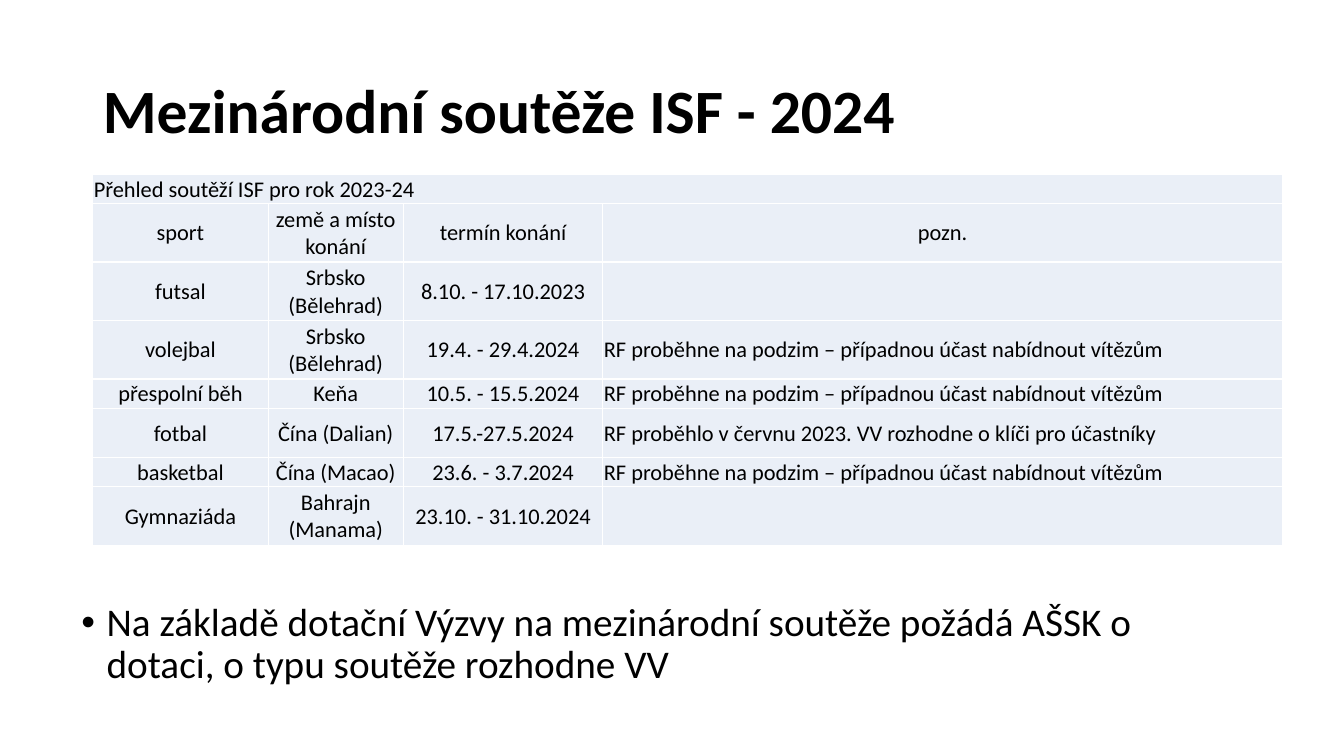
import pptx
import pptx.dml.color
import pptx.enum.text
import pptx.oxml
import pptx.oxml.ns
import pptx.util

EMU_PER_PX = 9144
COLORS = {"text": "000000", "cell": "EAEFF7", "border": "FFFFFF"}
FONT = "Calibri"
ALIGN = pptx.enum.text.PP_ALIGN
ANCHOR = pptx.enum.text.MSO_ANCHOR

TABLE_CAPTION = "Přehled soutěží ISF pro rok 2023-24"
AUTUMN_FINAL = "RF proběhne na podzim – případnou účast nabídnout vítězům"
HEADER = ("sport", "země a místo konání", "termín konání", "pozn.")
EVENTS = [
    ("futsal", "Srbsko (Bělehrad)", "8.10. - 17.10.2023", ""),
    ("volejbal", "Srbsko (Bělehrad)", "19.4. - 29.4.2024", AUTUMN_FINAL),
    ("přespolní běh", "Keňa", "10.5. - 15.5.2024", AUTUMN_FINAL),
    ("fotbal", "Čína (Dalian)", "17.5.-27.5.2024",
     "RF proběhlo v červnu 2023. VV rozhodne o klíči pro účastníky"),
    ("basketbal", "Čína (Macao)", "23.6. - 3.7.2024", AUTUMN_FINAL),
    ("Gymnaziáda", "Bahrajn (Manama)", "23.10. - 31.10.2024", ""),
]
COL_WIDTHS = (174, 134, 198, 674)
ROW_HEIGHTS = (29, 58, 58, 58, 29, 49, 29, 58)


def px(n):
    return pptx.util.Emu(n * EMU_PER_PX)


def rgb(name):
    return pptx.dml.color.RGBColor.from_string(COLORS[name])


def write_text(tf, text, size=16, bold=False, align=ALIGN.LEFT,
               anchor=ANCHOR.TOP, line_spacing=None, space_before=0):
    tf.word_wrap = True
    tf.vertical_anchor = anchor
    p = tf.paragraphs[0]
    p.alignment = align
    p.line_spacing = line_spacing
    p.space_before = pptx.util.Pt(space_before)
    r = p.add_run()
    r.text = text
    r.font.name = FONT
    r.font.size = pptx.util.Pt(size)
    r.font.bold = bold
    r.font.color.rgb = rgb("text")
    return p


def add_title(s, x, y, w, h):
    sp = s.shapes.title
    sp.left, sp.top, sp.width, sp.height = map(px, (x, y, w, h))
    sp.text_frame.auto_size = pptx.enum.text.MSO_AUTO_SIZE.NONE
    write_text(sp.text_frame, "Mezinárodní soutěže ISF - 2024", size=44,
               bold=True, anchor=ANCHOR.MIDDLE, line_spacing=0.9)


def format_cell(cell):
    cell.margin_left = cell.margin_right = cell.margin_top = px(1)
    cell.margin_bottom = 0
    tc_pr = cell._tc.get_or_add_tcPr()
    for side in ("lnL", "lnR", "lnT", "lnB"):
        tc_pr.append(pptx.oxml.parse_xml(
            f'<a:{side} {pptx.oxml.ns.nsdecls("a")} w="12700"><a:solidFill>'
            f'<a:srgbClr val="{COLORS["border"]}"/></a:solidFill></a:{side}>'))
    cell.fill.solid()
    cell.fill.fore_color.rgb = rgb("cell")


def add_events_table(s, x, y, w, h):
    rows = [(TABLE_CAPTION, "", "", ""), HEADER, *EVENTS]
    table = s.shapes.add_table(len(rows), len(HEADER), *map(px, (x, y, w, h))).table
    table.first_row = table.horz_banding = False
    for col, width in zip(table.columns, COL_WIDTHS):
        col.width = px(width)
    for row, height in zip(table.rows, ROW_HEIGHTS):
        row.height = px(height)
    table.cell(0, 0).merge(table.cell(0, len(HEADER) - 1))
    for i, texts in enumerate(rows):
        for j, text in enumerate(texts):
            cell = table.cell(i, j)
            format_cell(cell)
            cell.vertical_anchor = ANCHOR.MIDDLE if i else ANCHOR.BOTTOM
            if text:
                centred = i == 1 or (i > 1 and j < 3)
                write_text(cell.text_frame, text,
                           align=ALIGN.CENTER if centred else ALIGN.LEFT,
                           anchor=cell.vertical_anchor)


def add_grant_note(s, x, y, w, h):
    tf = s.shapes.add_textbox(*map(px, (x, y, w, h))).text_frame
    p = write_text(tf, "Na základě dotační Výzvy na mezinárodní soutěže požádá "
                   "AŠSK o dotaci, o typu soutěže rozhodne VV",
                   size=28, line_spacing=0.9, space_before=10)
    p_pr = p._p.get_or_add_pPr()
    p_pr.set("marL", str(px(25)))
    p_pr.set("indent", str(px(-25)))
    for tag in ('buFont typeface="Arial"', 'buChar char="•"'):
        p_pr.append(pptx.oxml.parse_xml(f'<a:{tag} {pptx.oxml.ns.nsdecls("a")}/>'))


def main():
    prs = pptx.Presentation()
    prs.slide_width, prs.slide_height = px(1333), px(750)
    s = prs.slides.add_slide(prs.slide_layouts[5])
    add_title(s, 92, 40, 1150, 145)
    add_events_table(s, 92, 173, sum(COL_WIDTHS), sum(ROW_HEIGHTS))
    add_grant_note(s, 71, 593, 1150, 105)
    prs.save("out.pptx")


if __name__ == "__main__":
    main()
